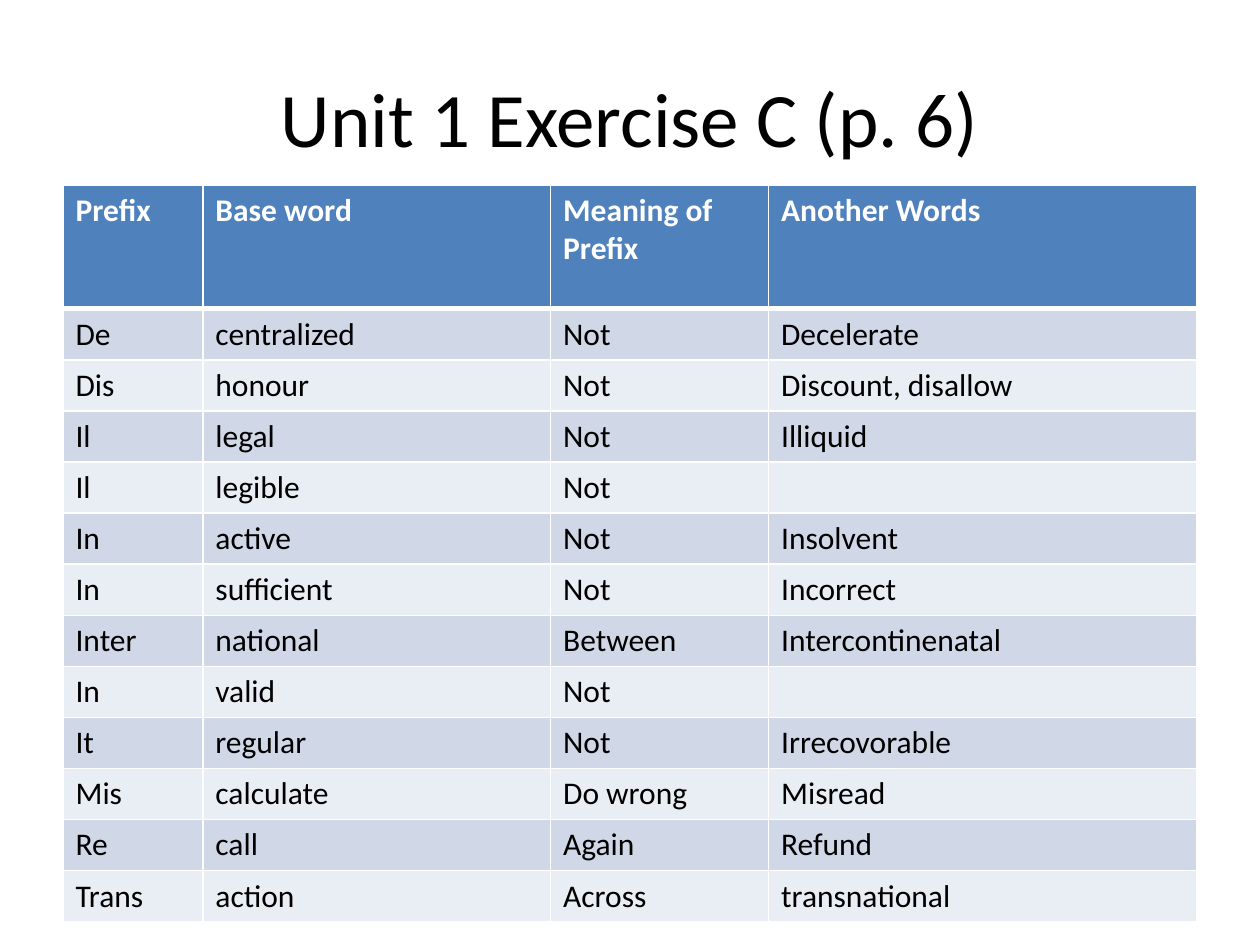
from lxml.etree import SubElement
from pptx import Presentation
from pptx.dml.color import RGBColor
from pptx.enum.text import MSO_ANCHOR, PP_ALIGN
from pptx.oxml.ns import qn
from pptx.util import Inches, Pt

FONT = "Calibri"
WHITE = RGBColor(0xFF, 0xFF, 0xFF)
BLACK = RGBColor(0x00, 0x00, 0x00)
HEADER_BLUE = RGBColor(0x4F, 0x81, 0xBD)
BAND_DARK = RGBColor(0xD0, 0xD8, 0xE8)
BAND_LIGHT = RGBColor(0xE9, 0xED, 0xF4)

COLUMN_WIDTHS = [1.11, 2.76, 1.73, 3.4]
HEADER_HEIGHT = Inches(0.98)
ROWS = [
    ("Prefix", "Base word", "Meaning of Prefix", "Another Words"),
    ("De", "centralized", "Not", "Decelerate"),
    ("Dis", "honour", "Not", "Discount, disallow"),
    ("Il", "legal", "Not", "Illiquid"),
    ("Il", "legible", "Not", ""),
    ("In", "active", "Not", "Insolvent"),
    ("In", "sufficient", "Not", "Incorrect"),
    ("Inter", "national", "Between", "Intercontinenatal"),
    ("In", "valid", "Not", ""),
    ("It", "regular", "Not", "Irrecovorable"),
    ("Mis", "calculate", "Do wrong", "Misread"),
    ("Re", "call", "Again", "Refund"),
    ("Trans", "action", "Across", "transnational"),
]


def set_font(p, size, color, bold=False):
    p.font.name = FONT
    p.font.size = Pt(size)
    p.font.bold = bold
    p.font.color.rgb = color


def set_borders(cell, top, bottom):
    tc_pr = cell._tc.get_or_add_tcPr()
    for side, width in (("lnL", 1), ("lnR", 1), ("lnT", top), ("lnB", bottom)):
        ln = SubElement(tc_pr, qn(f"a:{side}"), w=str(Pt(width)))
        fill = SubElement(ln, qn("a:solidFill"))
        SubElement(fill, qn("a:srgbClr"), val=str(WHITE))


def add_title(s, text, left, top, width, height):
    title = s.shapes.title
    title.left, title.top, title.width, title.height = left, top, width, height
    tf = title.text_frame
    tf.text = text
    tf.vertical_anchor = MSO_ANCHOR.MIDDLE
    p = tf.paragraphs[0]
    p.alignment = PP_ALIGN.CENTER
    set_font(p, 44, BLACK)


def format_cell(cell, text, row):
    header = row == 0
    set_borders(cell, 3 if row == 1 else 1, 3 if header else 1)
    cell.fill.solid()
    band = BAND_DARK if row % 2 else BAND_LIGHT
    cell.fill.fore_color.rgb = HEADER_BLUE if header else band
    cell.text = text
    set_font(cell.text_frame.paragraphs[0], 18, WHITE if header else BLACK, header)


def add_prefix_table(s, left, top, width, height):
    table = s.shapes.add_table(
        len(ROWS), len(COLUMN_WIDTHS), left, top, width, height
    ).table
    for column, column_width in zip(table.columns, COLUMN_WIDTHS):
        column.width = int(width * column_width / sum(COLUMN_WIDTHS))
    body_height = (height - HEADER_HEIGHT) // (len(ROWS) - 1)
    for i, words in enumerate(ROWS):
        table.rows[i].height = body_height if i else HEADER_HEIGHT
        for j, word in enumerate(words):
            format_cell(table.cell(i, j), word, i)


def main():
    prs = Presentation()
    prs.slide_width, prs.slide_height = Inches(10), Inches(7.5)
    s = prs.slides.add_slide(prs.slide_layouts[5])
    add_title(s, "Unit 1 Exercise C (p. 6)",
              Inches(0.5), Inches(0.3), Inches(9), Inches(1.25))
    add_prefix_table(s, Inches(0.5), Inches(1.47), Inches(9), Inches(5.85))
    prs.save("out.pptx")


if __name__ == "__main__":
    main()
